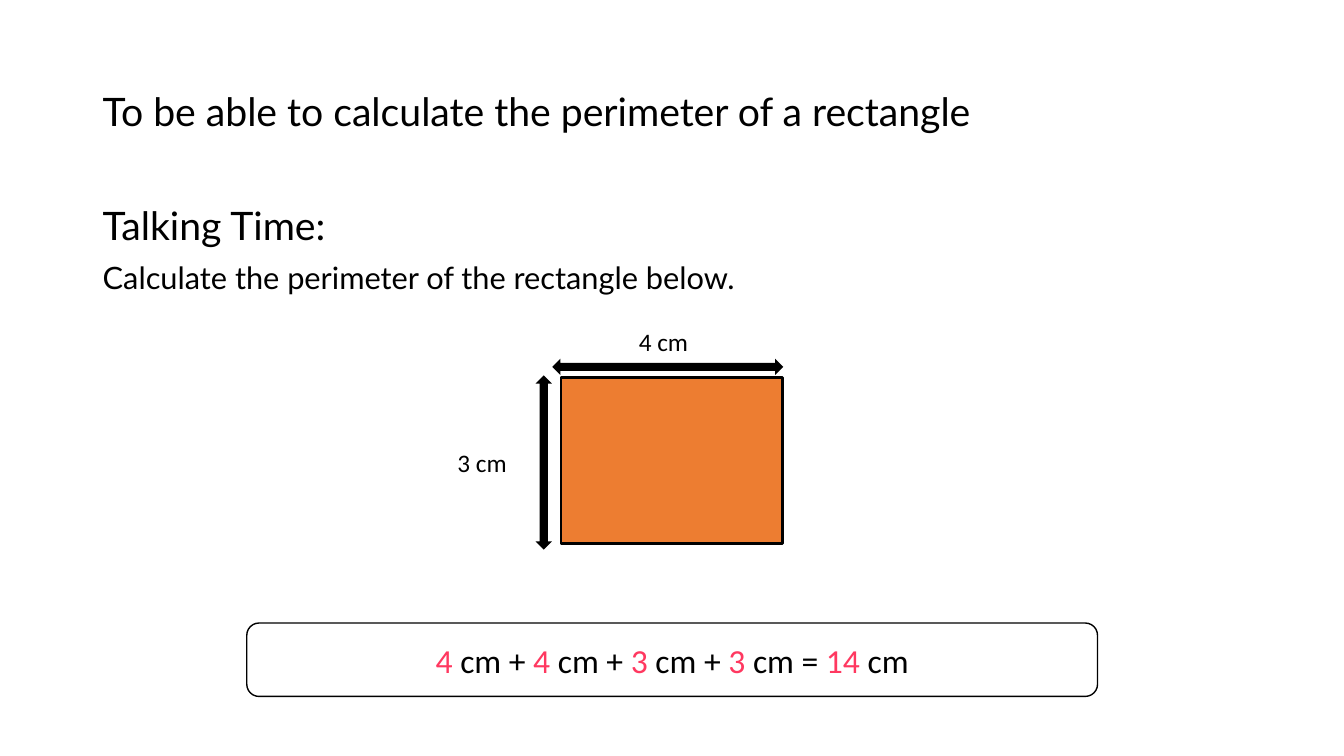
from pptx import Presentation, util as u
from pptx.dml.color import RGBColor
from pptx.enum import shapes, text

COLORS = {"ink": "000000", "paper": "FFFFFF", "orange": "ED7D31", "pink": "FF3860"}
KINDS = shapes.MSO_SHAPE


def color(name):
    return RGBColor.from_string(COLORS[name])


def add_run(p, words, size, font, ink="ink"):
    r = p.add_run()
    r.text = words
    r.font.size = u.Pt(size)
    r.font.name = font
    r.font.color.rgb = color(ink)


def add_text(s, box, lines, font, anchor=text.MSO_ANCHOR.TOP, line_spacing=1.0):
    """Place a text box with one paragraph per (words, size) pair."""
    tf = s.shapes.add_textbox(*map(u.Cm, box)).text_frame
    tf.word_wrap = True
    tf.vertical_anchor = anchor
    for i, (words, size) in enumerate(lines):
        p = tf.add_paragraph() if i else tf.paragraphs[0]
        p.line_spacing = line_spacing
        if i:
            p.space_before = u.Pt(10)
        add_run(p, words, size, font)


def add_figure(s, kind, box, fill, line_width=None):
    sp = s.shapes.add_shape(kind, *map(u.Cm, box))
    sp.shadow.inherit = False
    sp.fill.solid()
    sp.fill.fore_color.rgb = color(fill)
    if line_width:
        sp.line.color.rgb = color("ink")
        sp.line.width = u.Pt(line_width)
    else:
        sp.line.fill.background()
    return sp


def add_answer(s, box, sides, total):
    """Write the sum of the sides with its numbers picked out in pink."""
    sp = add_figure(s, KINDS.ROUNDED_RECTANGLE, box, "paper", 1)
    tf = sp.text_frame
    tf.vertical_anchor = text.MSO_ANCHOR.MIDDLE
    p = tf.paragraphs[0]
    p.alignment = text.PP_ALIGN.CENTER
    units = [" cm + "] * (len(sides) - 1) + [" cm = ", " cm"]
    for number, unit in zip(sides + [total], units):
        add_run(p, str(number), 24, "Calibri", "pink")
        add_run(p, unit, 24, "Calibri")


def main():
    prs = Presentation()
    prs.slide_width, prs.slide_height = u.Cm(33.87), u.Cm(19.05)
    s = prs.slides.add_slide(prs.slide_layouts[6])

    # Title and task
    add_text(s, (2.34, 1.02, 24.38, 3.68),
             [("To be able to calculate the perimeter of a rectangle", 28)],
             "Lato", text.MSO_ANCHOR.MIDDLE, 0.9)
    add_text(s, (2.34, 5.08, 29.21, 12.09),
             [("Talking Time:", 28),
              ("Calculate the perimeter of the rectangle below.", 22)],
             "Lato", line_spacing=0.9)

    # Rectangle with its dimension arrows
    add_figure(s, KINDS.RECTANGLE, (14.14, 9.51, 5.59, 4.19), "orange", 2)
    add_figure(s, KINDS.LEFT_RIGHT_ARROW, (13.92, 9.04, 5.82, 0.41), "ink")
    add_figure(s, KINDS.UP_DOWN_ARROW, (13.5, 9.46, 0.41, 4.39), "ink")

    # Dimension labels
    width, height = 4, 3
    add_text(s, (11.28, 11.15, 2.16, 1.02), [(f"{height} cm", 18)], "Calibri")
    add_text(s, (15.85, 8.1, 2.16, 1.02), [(f"{width} cm", 18)], "Calibri")

    # Answer
    sides = [width, width, height, height]
    add_answer(s, (6.22, 15.7, 21.44, 1.85), sides, sum(sides))

    prs.save("out.pptx")


if __name__ == "__main__":
    main()
